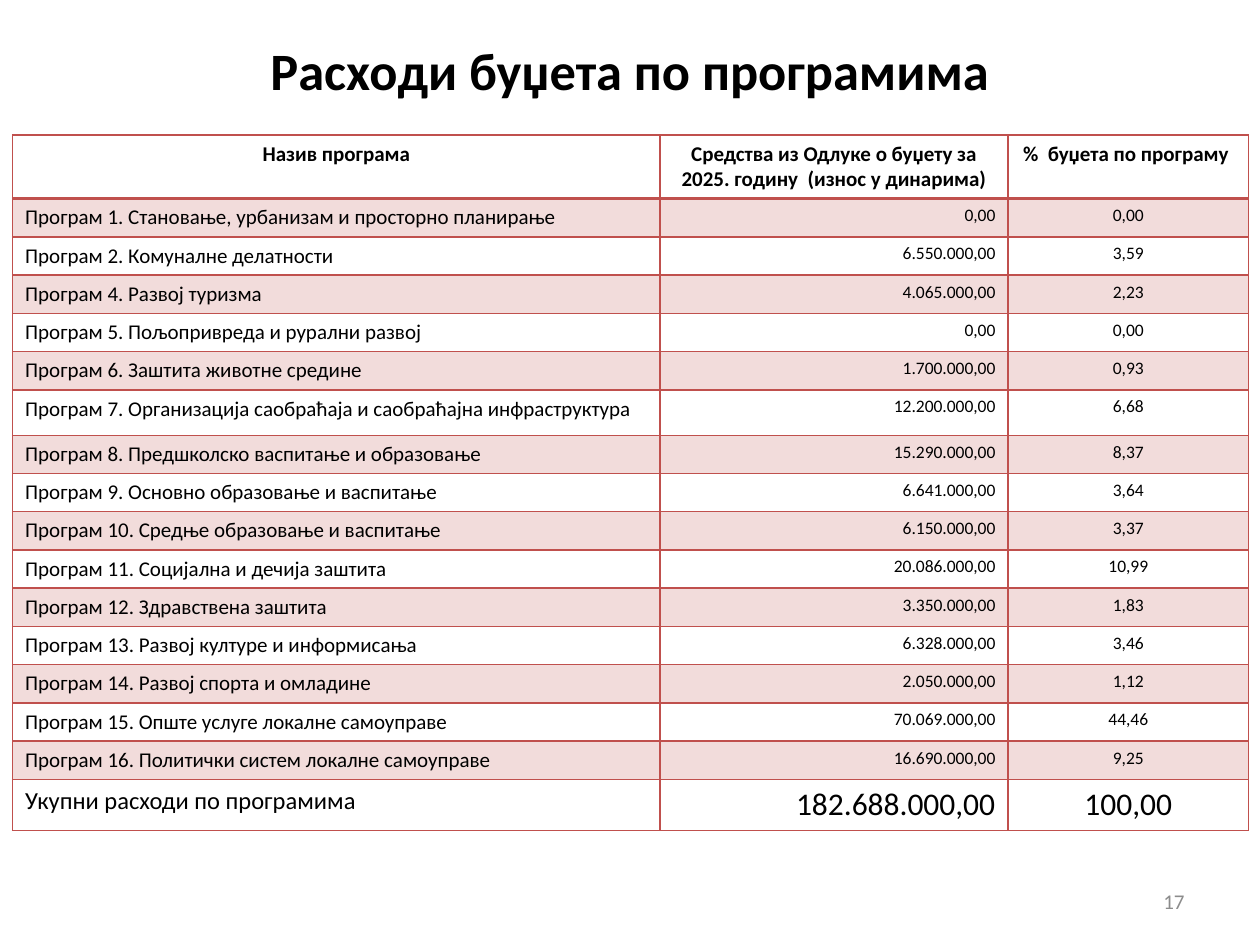
import pptx
import pptx.dml.color
import pptx.enum.text
import pptx.oxml
import pptx.oxml.ns
import pptx.util
from pptx.util import Inches

ALIGN = pptx.enum.text.PP_ALIGN
ANCHOR = pptx.enum.text.MSO_ANCHOR

TITLE = "Расходи буџета по програмима"
PAGE_NUMBER = "17"
HEADER = (
    "Назив програма",
    "Средства из Одлуке о буџету за 2025. годину  (износ у динарима)",
    "%  буџета по програму ",
)
PROGRAMS = [
    ("Програм 1. Становање, урбанизам и просторно планирање", "0,00", "0,00"),
    ("Програм 2. Комуналне делатности", "6.550.000,00", "3,59"),
    ("Програм 4. Развој туризма", "4.065.000,00", "2,23"),
    ("Програм 5. Пољопривреда и рурални развој", "0,00", "0,00"),
    ("Програм 6. Заштита животне средине", "1.700.000,00", "0,93"),
    ("Програм 7. Организација саобраћаја и саобраћајна инфраструктура", "12.200.000,00", "6,68"),
    ("Програм 8. Предшколско васпитање и образовање", "15.290.000,00", "8,37"),
    ("Програм 9. Основно образовање и васпитање", "6.641.000,00", "3,64"),
    ("Програм 10. Средње образовање и васпитање", "6.150.000,00", "3,37"),
    ("Програм 11. Социјална и дечија заштита", "20.086.000,00", "10,99"),
    ("Програм 12. Здравствена заштита", "3.350.000,00", "1,83"),
    ("Програм 13. Развој културе и информисања", "6.328.000,00", "3,46"),
    ("Програм 14. Развој спорта и омладине", "2.050.000,00", "1,12"),
    ("Програм 15. Опште услуге локалне самоуправе", "70.069.000,00", "44,46"),
    ("Програм 16. Политички систем локалне самоуправе", "16.690.000,00", "9,25"),
]
TOTAL = ("Укупни расходи по програмима", "182.688.000,00", "100,00")

THEME = {
    "font": "Calibri",
    "text": "000000",
    "muted": "8C8C8C",
    "line": "C0504D",
    "band": "F2DCDB",
    "title_size": 30,
    "number_size": 12,
    "header_sizes": (12, 12, 12),
    "program_sizes": (12, 10, 10),
    "total_sizes": (14, 18, 18),
}
COLUMN_WIDTHS = (5.14, 2.76, 1.91)
COLUMN_ALIGNS = (ALIGN.LEFT, ALIGN.RIGHT, ALIGN.CENTER)
HEADER_HEIGHT, PROGRAM_HEIGHT, TALL_HEIGHT, TOTAL_HEIGHT = 0.49, 0.3, 0.36, 0.39
TALL_PROGRAM = 5


def write(frame, text, *, size, align, color=THEME["text"], bold=False):
    para = frame.paragraphs[0]
    para.alignment = align
    span = para.add_run()
    span.text = text
    span.font.name = THEME["font"]
    span.font.size = pptx.util.Pt(size)
    span.font.bold = bold
    span.font.color.rgb = pptx.dml.color.RGBColor.from_string(color)


def add_borders(cell, top=1, bottom=1):
    """Line all four sides of a cell; widths are in points."""
    properties = cell._tc.get_or_add_tcPr()
    for side, width in (("L", 1), ("R", 1), ("T", top), ("B", bottom)):
        properties.append(pptx.oxml.parse_xml(
            f'<a:ln{side} {pptx.oxml.ns.nsdecls("a")} w="{pptx.util.Pt(width)}">'
            f'<a:solidFill><a:srgbClr val="{THEME["line"]}"/></a:solidFill></a:ln{side}>'
        ))


def fill_row(table, index, texts, *, sizes, aligns=COLUMN_ALIGNS, bold=False,
             banded=False, top=1, bottom=1):
    for column, text in enumerate(texts):
        cell = table.cell(index, column)
        write(cell.text_frame, text, size=sizes[column], align=aligns[column], bold=bold)
        add_borders(cell, top, bottom)
        if banded:
            cell.fill.solid()
            cell.fill.fore_color.rgb = pptx.dml.color.RGBColor.from_string(THEME["band"])
        else:
            cell.fill.background()


def add_budget_table(page):
    heights = [HEADER_HEIGHT] + [PROGRAM_HEIGHT] * len(PROGRAMS) + [TOTAL_HEIGHT]
    heights[1 + TALL_PROGRAM] = TALL_HEIGHT
    table = page.shapes.add_table(
        len(heights), len(COLUMN_WIDTHS), Inches(0.1), Inches(1.07),
        Inches(sum(COLUMN_WIDTHS)), Inches(sum(heights)),
    ).table
    table.first_row = table.horz_banding = False
    for column, width in zip(table.columns, COLUMN_WIDTHS):
        column.width = Inches(width)
    for row, height in zip(table.rows, heights):
        row.height = Inches(height)

    fill_row(table, 0, HEADER, sizes=THEME["header_sizes"],
             aligns=[ALIGN.CENTER] * len(HEADER), bold=True, bottom=2)
    for index, program in enumerate(PROGRAMS, start=1):
        fill_row(table, index, program, sizes=THEME["program_sizes"],
                 banded=index % 2 == 1, top=2 if index == 1 else 1)
    fill_row(table, len(heights) - 1, TOTAL, sizes=THEME["total_sizes"])


def main():
    deck = pptx.Presentation()
    deck.slide_width, deck.slide_height = Inches(10), Inches(7.5)
    page = deck.slides.add_slide(deck.slide_layouts[5])

    title = page.shapes.title
    title.left, title.top = Inches(0.74), Inches(0.13)
    title.width, title.height = Inches(8.52), Inches(0.85)
    title.text_frame.vertical_anchor = ANCHOR.MIDDLE
    write(title.text_frame, TITLE, size=THEME["title_size"], align=ALIGN.CENTER, bold=True)

    add_budget_table(page)

    box = page.shapes.add_textbox(Inches(7.17), Inches(6.95), Inches(2.33), Inches(0.4))
    box.text_frame.word_wrap = True
    box.text_frame.vertical_anchor = ANCHOR.MIDDLE
    write(box.text_frame, PAGE_NUMBER, size=THEME["number_size"], align=ALIGN.RIGHT,
          color=THEME["muted"])

    deck.save("out.pptx")


if __name__ == "__main__":
    main()
